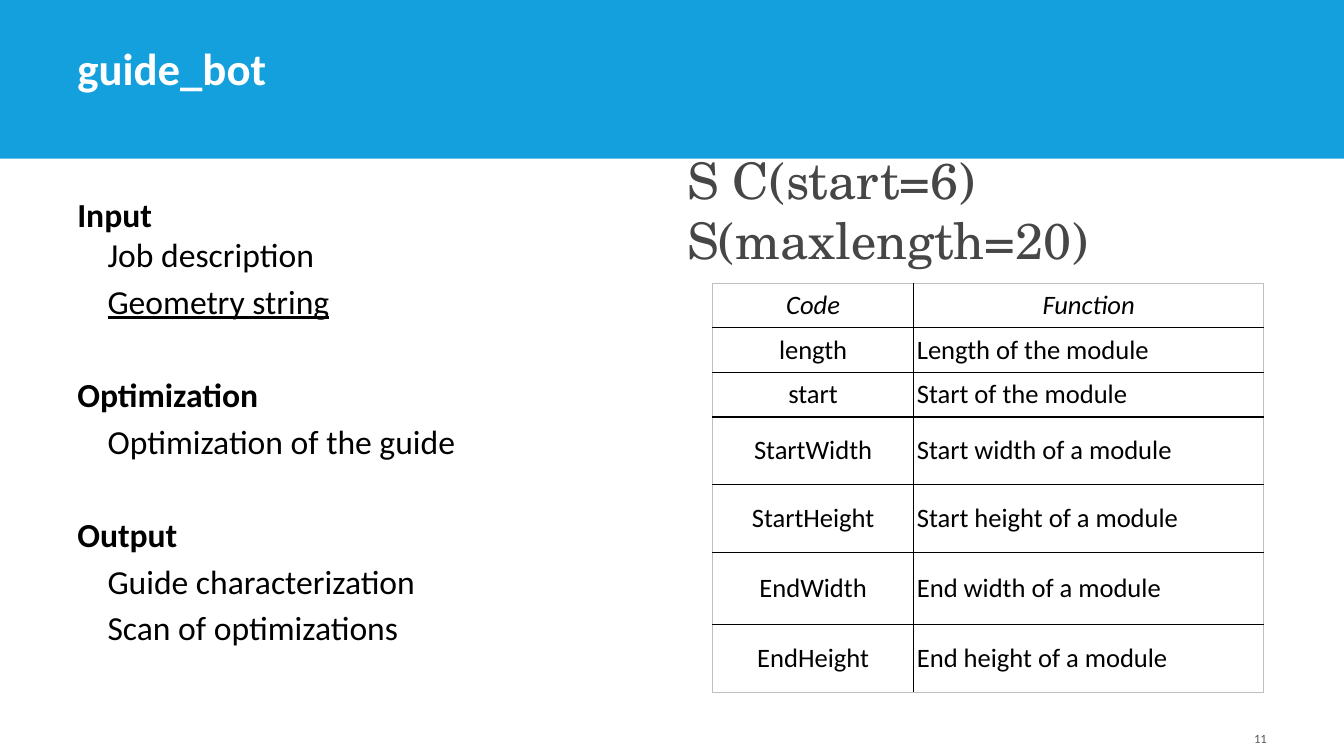
"""Build the guide_bot slide: job outline, geometry string and table of options."""
from dataclasses import dataclass

from lxml import etree
from pptx import Presentation
from pptx import util as u
from pptx.dml.color import RGBColor
from pptx.enum import shapes, text
from pptx.oxml.ns import qn

SLIDE_WIDTH, SLIDE_HEIGHT = u.Inches(13.33), u.Inches(7.5)
BLUE = RGBColor(0x13, 0xA0, 0xDD)
WHITE = RGBColor(0xFF, 0xFF, 0xFF)
BLACK = RGBColor(0x00, 0x00, 0x00)
CHARCOAL = RGBColor(0x46, 0x46, 0x46)
GREY = RGBColor(0x59, 0x59, 0x59)
PALE_GREY = RGBColor(0xBF, 0xBF, 0xBF)
LEFT, CENTER, RIGHT = text.PP_ALIGN.LEFT, text.PP_ALIGN.CENTER, text.PP_ALIGN.RIGHT


def across(share: float) -> int:
    """Turn a percentage of the slide's width into a length."""
    return round(SLIDE_WIDTH * share / 100)


def down(share: float) -> int:
    """Turn a percentage of the slide's height into a length."""
    return round(SLIDE_HEIGHT * share / 100)


@dataclass(frozen=True)
class Area:
    """A rectangle in percentages of the slide's width and height."""

    left: float
    top: float
    width: float
    height: float

    def lengths(self) -> tuple[int, int, int, int]:
        """Give left, top, width and height as lengths."""
        return across(self.left), down(self.top), across(self.width), down(self.height)


@dataclass(frozen=True)
class Style:
    """The look of a run."""

    size: float
    color: RGBColor = BLACK
    face: str = "Calibri"
    bold: bool = False
    italic: bool = False
    underline: bool = False


@dataclass(frozen=True)
class Entry:
    """A line of the outline with its space before in points."""

    wording: str
    before: float
    heading: bool = False
    underline: bool = False


@dataclass(frozen=True)
class Option:
    """A row of the table with its height as a share of the slide."""

    code: str
    function: str
    height: float


OUTLINE = (
    Entry("Input", 0, heading=True),
    Entry("Job description", 0),
    Entry("Geometry string", 4.3, underline=True),
    Entry("Optimization", 38, heading=True),
    Entry("Optimization of the guide", 4.3),
    Entry("Output", 38, heading=True),
    Entry("Guide characterization", 4.3),
    Entry("Scan of optimizations", 4.3),
)
OPTIONS = (
    Option("Code", "Function", 5.87),
    Option("length", "Length of the module", 5.93),
    Option("start", "Start of the module", 5.87),
    Option("StartWidth", "Start width of a module", 8.95),
    Option("StartHeight", "Start height of a module", 8.95),
    Option("EndWidth", "End width of a module", 9.55),
    Option("EndHeight", "End height of a module", 8.95),
)
COLUMN_SHARES = (15, 26)


def place(shape, area: Area) -> None:
    """Move a shape to an area."""
    shape.left, shape.top, shape.width, shape.height = area.lengths()


def set_frame(frame, anchor, inset: float | None = None) -> None:
    """Set wrapping, anchor and, if given, equal insets of a text frame."""
    frame.word_wrap = True
    frame.auto_size = text.MSO_AUTO_SIZE.NONE
    frame.vertical_anchor = anchor
    if inset is not None:
        frame.margin_left = frame.margin_right = u.Inches(inset)
        frame.margin_top = frame.margin_bottom = u.Inches(inset)


def write(paragraph, wording: str, style: Style, align=LEFT) -> None:
    """Add a formatted run to a paragraph."""
    paragraph.alignment = align
    run = paragraph.add_run()
    run.text = wording
    font = run.font
    font.name, font.size, font.color.rgb = style.face, u.Pt(style.size), style.color
    font.bold, font.italic, font.underline = style.bold, style.italic, style.underline


def add_label(slide, area: Area, wording: str, style: Style, anchor, align, inset=None):
    """Add a text box with one run and return its frame."""
    frame = slide.shapes.add_textbox(*area.lengths()).text_frame
    set_frame(frame, anchor, inset)
    write(frame.paragraphs[0], wording, style, align)
    return frame


def add_band(slide) -> None:
    """Draw the blue band behind the title."""
    band = slide.shapes.add_shape(shapes.MSO_SHAPE.RECTANGLE, *Area(0, 0, 100, 21).lengths())
    band.shadow.inherit = False
    band.fill.solid()
    band.fill.fore_color.rgb = BLUE
    band.line.fill.background()
    slide.shapes._spTree.insert(2, band._element)


def fill_outline(body) -> None:
    """Write the outline into the body placeholder."""
    place(body, Area(5, 25, 35.1, 66))
    frame = body.text_frame
    set_frame(frame, text.MSO_ANCHOR.TOP)
    for index, entry in enumerate(OUTLINE):
        paragraph = frame.paragraphs[0] if index == 0 else frame.add_paragraph()
        properties = paragraph._p.get_or_add_pPr()
        etree.SubElement(properties, qn("a:buNone"))
        properties.set("marL", str(0 if entry.heading else u.Inches(0.3)))
        properties.set("indent", "0")
        paragraph.space_before = u.Pt(entry.before)
        write(paragraph, entry.wording,
              Style(24, bold=entry.heading, underline=entry.underline))


def set_borders(cell, edges: dict[str, bool]) -> None:
    """Draw the cell's edges: pale on the table's rim, black inside."""
    properties = cell._tc.get_or_add_tcPr()
    for position, (edge, on_rim) in enumerate(edges.items()):
        line = etree.Element(qn(f"a:{edge}"), w=str(u.Pt(1)))
        fill = etree.SubElement(line, qn("a:solidFill"))
        etree.SubElement(fill, qn("a:srgbClr"), val=str(PALE_GREY if on_rim else BLACK))
        properties.insert(position, line)


def add_options(slide) -> None:
    """Add the table of codes and functions."""
    area = Area(53, 37.5, sum(COLUMN_SHARES), sum(option.height for option in OPTIONS))
    last_row, last_column = len(OPTIONS) - 1, len(COLUMN_SHARES) - 1
    table = slide.shapes.add_table(last_row + 1, last_column + 1, *area.lengths()).table
    table.first_row = table.horz_banding = False
    for column, share in zip(table.columns, COLUMN_SHARES):
        column.width = across(share)
    for row, option in enumerate(OPTIONS):
        table.rows[row].height = down(option.height)
        for column, wording in enumerate((option.code, option.function)):
            cell = table.cell(row, column)
            cell.fill.background()
            cell.vertical_anchor = text.MSO_ANCHOR.MIDDLE
            cell.margin_left = cell.margin_right = u.Inches(0.03)
            cell.margin_top = cell.margin_bottom = u.Inches(0.03)
            write(cell.text_frame.paragraphs[0], wording, Style(19, italic=row == 0),
                  CENTER if row == 0 or column == 0 else LEFT)
            set_borders(cell, {"lnL": column == 0, "lnR": column == last_column,
                               "lnT": row == 0, "lnB": row == last_row})


def main() -> None:
    """Build and save the slide."""
    deck = Presentation()
    deck.slide_width, deck.slide_height = SLIDE_WIDTH, SLIDE_HEIGHT
    slide = deck.slides.add_slide(deck.slide_layouts[1])
    add_band(slide)
    heading = slide.shapes.title
    place(heading, Area(5, 5.1, 78.1, 8.1))
    set_frame(heading.text_frame, text.MSO_ANCHOR.BOTTOM)
    write(heading.text_frame.paragraphs[0], "guide_bot", Style(32, WHITE, bold=True))
    add_label(slide, Area(71.7, 94.1, 23.3, 5.3), "11", Style(9, GREY),
              text.MSO_ANCHOR.BOTTOM, RIGHT)
    add_options(slide)
    geometry = add_label(slide, Area(50.9, 23.3, 45.1, 8.8), "S C(start=6) S(maxlength=20)",
                         Style(36, CHARCOAL, "TeX Gyre Schola"),
                         text.MSO_ANCHOR.MIDDLE, LEFT, 0.03)
    geometry.auto_size = text.MSO_AUTO_SIZE.SHAPE_TO_FIT_TEXT
    fill_outline(slide.placeholders[1])
    deck.save("out.pptx")


if __name__ == "__main__":
    main()
